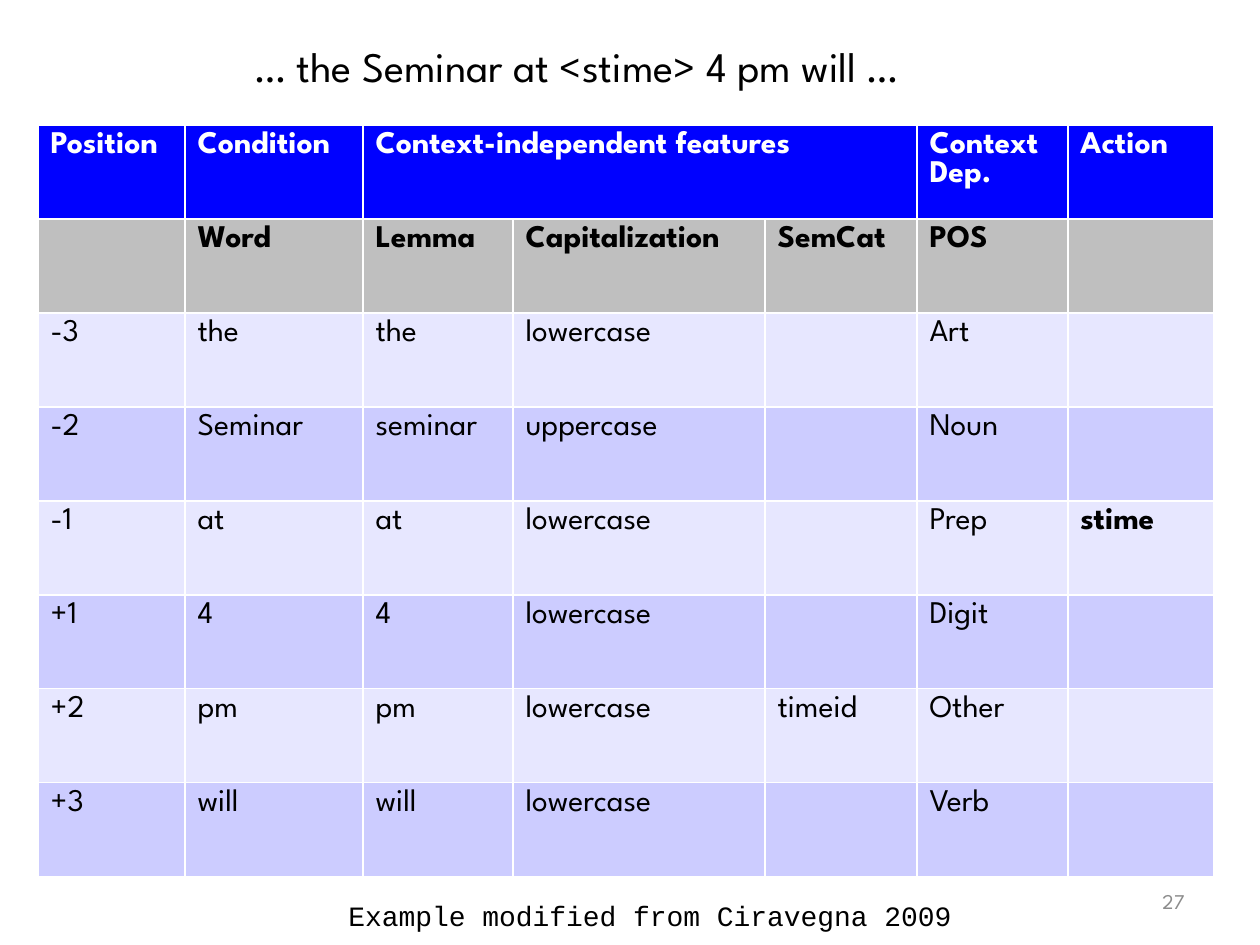
from pptx import Presentation
from pptx import util as u
from pptx.dml.color import RGBColor
from pptx.enum import text

PX = u.Inches(1) / 126
SANS, MONO = "League Spartan", "Courier New"
WHITE = RGBColor(0xFF, 0xFF, 0xFF)
BLACK = RGBColor(0x00, 0x00, 0x00)
NUMBER_GRAY = RGBColor(0x8C, 0x8C, 0x8C)
HEADER_BLUE = RGBColor(0x00, 0x01, 0xFF)
SUBHEAD_GRAY = RGBColor(0xBF, 0xBF, 0xBF)
BANDS = RGBColor(0xE7, 0xE7, 0xFF), RGBColor(0xCC, 0xCC, 0xFF)

COL_WIDTHS = 147, 178, 150, 252, 152, 151, 146
ROWS = [
    ("Position", "Condition", "Context-independent features", "", "", "Context Dep.", "Action"),
    ("", "Word", "Lemma", "Capitalization", "SemCat", "POS", ""),
    ("-3", "the", "the", "lowercase", "", "Art", ""),
    ("-2", "Seminar", "seminar", "uppercase", "", "Noun", ""),
    ("-1", "at", "at", "lowercase", "", "Prep", "stime"),
    ("+1", "4", "4", "lowercase", "", "Digit", ""),
    ("+2", "pm", "pm", "lowercase", "timeid", "Other", ""),
    ("+3", "will", "will", "lowercase", "", "Verb", ""),
]


def px(n):
    return u.Emu(round(n * PX))


def style(p, size, color=BLACK, name=SANS, bold=False):
    f = p.font
    f.size, f.name, f.bold = u.Pt(size), name, bold
    f.color.rgb = color


def add_label(s, box, label, size, color=BLACK, name=SANS,
              align=text.PP_ALIGN.LEFT, anchor=text.MSO_ANCHOR.TOP):
    tf = s.shapes.add_textbox(*map(px, box)).text_frame
    tf.word_wrap = True
    tf.vertical_anchor = anchor
    p = tf.paragraphs[0]
    p.text, p.alignment = label, align
    style(p, size, color, name)


def add_feature_table(s, box):
    table = s.shapes.add_table(len(ROWS), len(COL_WIDTHS), *map(px, box)).table
    for col, width in zip(table.columns, COL_WIDTHS):
        col.width = px(width)
    for row in table.rows:
        row.height = px(box[3] // len(ROWS))
    table.cell(0, 2).merge(table.cell(0, 4))
    fills = [HEADER_BLUE, SUBHEAD_GRAY] + [BANDS[i % 2] for i in range(len(ROWS) - 2)]
    for i, (values, fill) in enumerate(zip(ROWS, fills)):
        for j, value in enumerate(values):
            cell = table.cell(i, j)
            cell.fill.solid()
            cell.fill.fore_color.rgb = fill
            if value:
                cell.text = value
                style(cell.text_frame.paragraphs[0], 18, BLACK if i else WHITE,
                      bold=i < 2 or j == len(COL_WIDTHS) - 1)


def main():
    prs = Presentation()
    prs.slide_width, prs.slide_height = px(1260), px(945)
    s = prs.slides.add_slide(prs.slide_layouts[6])
    add_label(s, (903, 876, 294, 50), "27", 12, NUMBER_GRAY,
              align=text.PP_ALIGN.RIGHT, anchor=text.MSO_ANCHOR.MIDDLE)
    add_feature_table(s, (38, 125, 1176, 755))
    add_label(s, (242, 34, 974, 63), "… the Seminar at <stime> 4 pm will …", 24)
    add_label(s, (336, 892, 644, 47), "Example modified from Ciravegna 2009", 16, name=MONO)
    prs.save("out.pptx")


if __name__ == "__main__":
    main()
